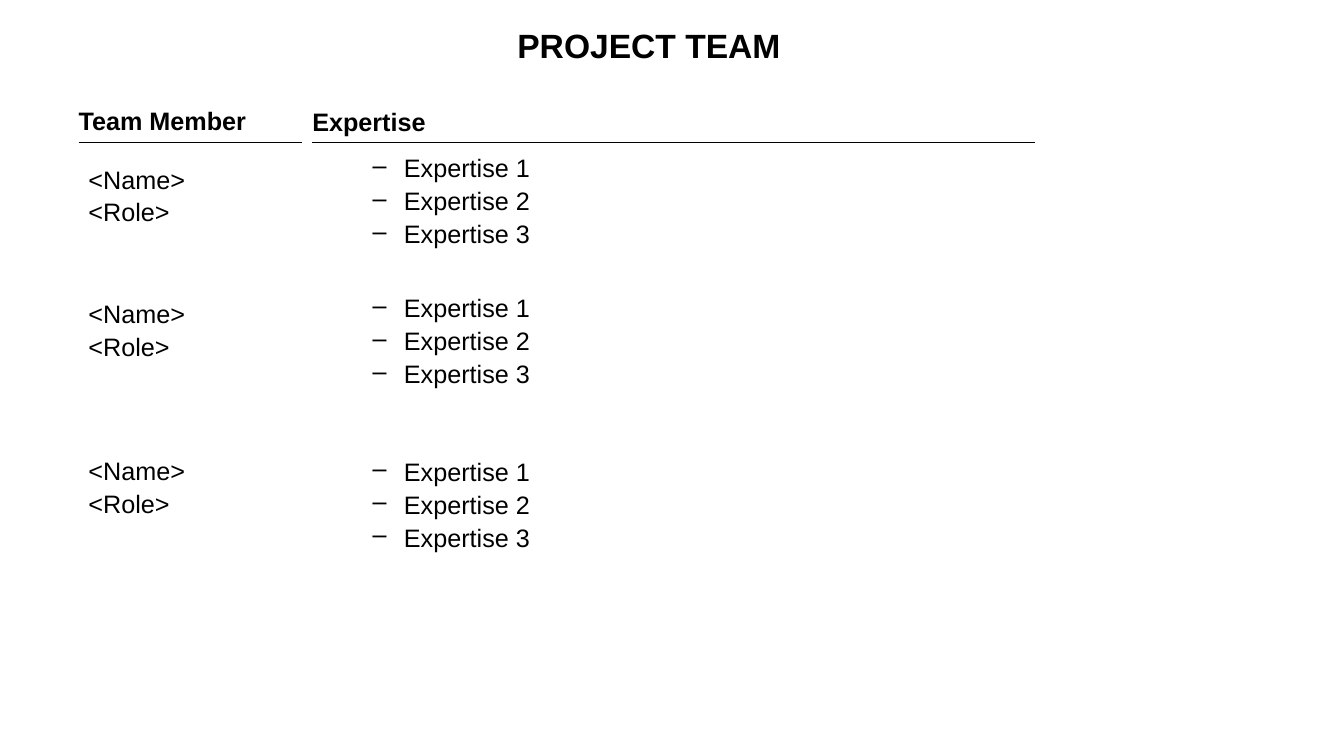
import pptx
import pptx.dml.color
import pptx.enum.shapes
import pptx.enum.text
import pptx.oxml
import pptx.oxml.ns
import pptx.util

Cm = pptx.util.Cm
Pt = pptx.util.Pt

COLOURS = {"text": "000000", "rule": "000000"}
FONT = "Arial"
MEMBER_LEFT, MEMBER_WIDTH = 1.98, 18.47
EXPERTISE_LEFT, EXPERTISE_WIDTH = 7.87, 18.21
RULE_TOP = 3.58
TEAM = [  # top of the member text, top of the expertise list
    (4.09, 3.81),
    (7.47, 7.34),
    (11.43, 11.46),
]


def colour(name):
    return pptx.dml.color.RGBColor.from_string(COLOURS[name])


def write(text_frame, lines, size=18, bold=False, align=None, before=4.1, bullet=None):
    """Fill a text frame with one paragraph per line."""
    text_frame.word_wrap = True
    for index, line in enumerate(lines):
        paragraph = text_frame.paragraphs[0] if index == 0 else text_frame.add_paragraph()
        paragraph.alignment = align
        paragraph.line_spacing = 0.9
        paragraph.space_before = Pt(before)
        run = paragraph.add_run()
        run.text = line
        run.font.name = FONT
        run.font.size = Pt(size)
        run.font.bold = bold
        run.font.color.rgb = colour("text")
        if bullet:
            paragraph.level = 1
            properties = paragraph._p.get_or_add_pPr()
            properties.set("marL", str(Cm(2.06)))
            properties.set("indent", str(-Cm(0.79)))
            mark = pptx.oxml.parse_xml(f'<a:buChar {pptx.oxml.ns.nsdecls("a")} char="{bullet}"/>')
            properties.append(mark)


def add_text(slide, left, top, width, height, lines, side_inset=0.25, **text_format):
    box = slide.shapes.add_textbox(Cm(left), Cm(top), Cm(width), Cm(height))
    box.text_frame.margin_left = box.text_frame.margin_right = Cm(side_inset)
    write(box.text_frame, lines, **text_format)


def add_title(slide, left, top, width, height, text):
    title = slide.shapes.title
    title.left, title.top, title.width, title.height = Cm(left), Cm(top), Cm(width), Cm(height)
    title.text_frame.vertical_anchor = pptx.enum.text.MSO_ANCHOR.MIDDLE
    write(title.text_frame, [text], size=24, bold=True, before=0,
          align=pptx.enum.text.PP_ALIGN.CENTER)


def add_heading(slide, left, top, rule_width, text):
    """Place a column heading and the rule under it."""
    add_text(slide, left, top, 5.08, 0.97, [text], side_inset=0, bold=True)
    rule = slide.shapes.add_connector(
        pptx.enum.shapes.MSO_CONNECTOR.STRAIGHT,
        Cm(left), Cm(RULE_TOP), Cm(left + rule_width), Cm(RULE_TOP))
    rule.line.color.rgb = colour("rule")
    rule.line.width = Pt(0.75)
    effects = pptx.oxml.parse_xml(f'<a:effectLst {pptx.oxml.ns.nsdecls("a")}/>')
    rule._element.spPr.append(effects)


def add_member(slide, member_top, expertise_top):
    add_text(slide, MEMBER_LEFT, member_top, MEMBER_WIDTH, 3.66, ["<Name>", "<Role>"])
    add_text(slide, EXPERTISE_LEFT, expertise_top, EXPERTISE_WIDTH, 2.64,
             [f"Expertise {number}" for number in range(1, 4)], bullet="–")


def main():
    presentation = pptx.Presentation()
    presentation.slide_width, presentation.slide_height = Cm(33.87), Cm(19.05)
    slide = presentation.slides.add_slide(presentation.slide_layouts[5])
    add_title(slide, 5.56, 0.56, 21.59, 1.27, "PROJECT TEAM")
    add_heading(slide, MEMBER_LEFT, 2.62, 5.64, "Team Member")
    add_heading(slide, EXPERTISE_LEFT, 2.64, EXPERTISE_WIDTH, "Expertise")
    for member_top, expertise_top in TEAM:
        add_member(slide, member_top, expertise_top)
    presentation.save("out.pptx")


if __name__ == "__main__":
    main()
